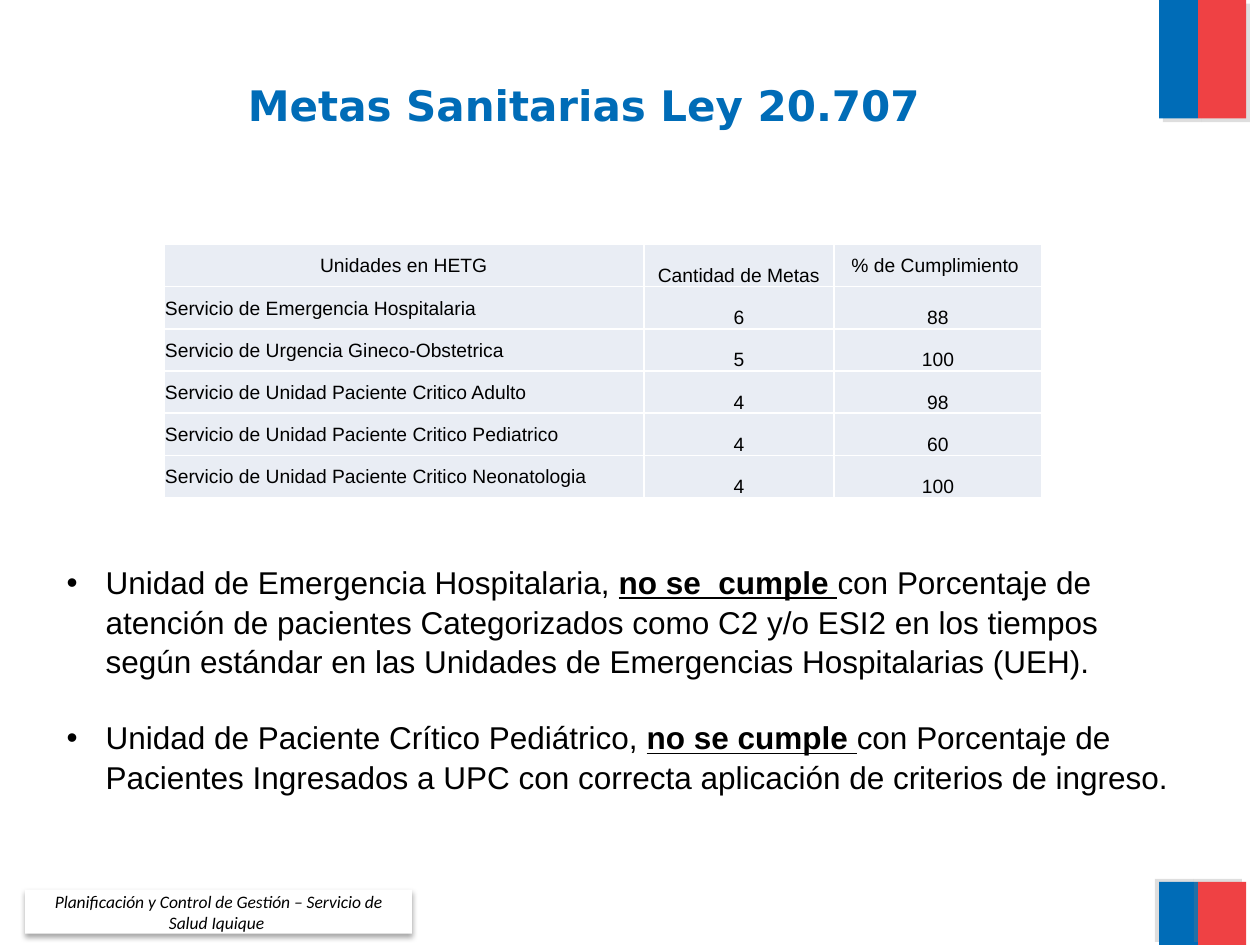
"""Build the slide on the health goals of Ley 20.707."""
import pptx
import pptx.util
import pptx.dml.color
import pptx.enum.shapes
import pptx.enum.text
import pptx.oxml
import pptx.oxml.ns

Pt = pptx.util.Pt
Align = pptx.enum.text.PP_ALIGN
Anchor = pptx.enum.text.MSO_ANCHOR

BLUE, RED, BLACK, WHITE, CELL = "006CB7", "EF4144", "000000", "FFFFFF", "E9EDF4"
TITLE = "Metas Sanitarias Ley 20.707"
FOOTER = "Planificación y Control de Gestión – Servicio de Salud Iquique "
ROWS = [
    ("Unidades en HETG", "Cantidad de Metas", "% de Cumplimiento "),
    ("Servicio de Emergencia Hospitalaria", "6", "88"),
    ("Servicio de Urgencia Gineco-Obstetrica", "5", "100"),
    ("Servicio de Unidad Paciente Critico Adulto", "4", "98"),
    ("Servicio de Unidad Paciente Critico Pediatrico", "4", "60"),
    ("Servicio de Unidad Paciente Critico Neonatologia", "4", "100"),
]
FINDINGS = [
    ("Unidad de Emergencia Hospitalaria, ", "no se  cumple ",
     "con Porcentaje de atención de pacientes Categorizados como C2 y/o ESI2 en los "
     "tiempos según estándar en las Unidades de Emergencias Hospitalarias (UEH)."),
    ("Unidad de Paciente Crítico Pediátrico, ", "no se cumple ",
     "con Porcentaje de Pacientes Ingresados a UPC con correcta aplicación de "
     "criterios de ingreso."),
]
COLUMN_WIDTHS = [274.3, 108.7, 118.8]
ROW_HEIGHT = 24.1
FLAG_STRIPES = [(662.4, 22.3, BLUE), (684.7, 27.4, RED)]
FLAG_BANDS = [(0, 67.7, 45), (504, 36, 215)]
INDENT = 22.3


def color(value):
    return pptx.dml.color.RGBColor.from_string(value)


def element(xml):
    return pptx.oxml.parse_xml(xml.replace(">", f" {pptx.oxml.ns.nsdecls('a')}>", 1))


def add_span(para, text, size, font, shade=BLACK, bold=False, italic=False, underline=False):
    span = para.add_run()
    span.text = text
    span.font.size, span.font.name = Pt(size), font
    span.font.bold, span.font.italic, span.font.underline = bold, italic, underline
    span.font.color.rgb = color(shade)


def add_text_box(slide, left, top, width, height):
    box = slide.shapes.add_textbox(Pt(left), Pt(top), Pt(width), Pt(height))
    box.text_frame.word_wrap = True
    return box


def add_rectangle(slide, left, top, width, height, fill, shade, opacity, blur, distance, angle):
    box = slide.shapes.add_shape(pptx.enum.shapes.MSO_SHAPE.RECTANGLE,
                                 Pt(left), Pt(top), Pt(width), Pt(height))
    box.fill.solid()
    box.fill.fore_color.rgb = color(fill)
    box.line.fill.background()
    box.shadow.inherit = False
    effects = box._element.spPr.find(pptx.oxml.ns.qn("a:effectLst"))
    effects.append(element(
        f'<a:outerShdw blurRad="{Pt(blur)}" dist="{Pt(distance)}" dir="{angle * 60000}" '
        f'algn="ctr" rotWithShape="0"><a:srgbClr val="{shade}">'
        f'<a:alpha val="{opacity * 1000}"/></a:srgbClr></a:outerShdw>'))
    return box


def add_flags(slide):
    for top, height, angle in FLAG_BANDS:
        for left, width, fill in FLAG_STRIPES:
            add_rectangle(slide, left, top, width, height, fill, "808080", 25, 0, 3, angle)


def add_title(slide):
    frame = add_text_box(slide, 12.2, 12.2, 643, 90).text_frame
    frame.vertical_anchor = Anchor.MIDDLE
    frame.margin_top = Pt(8.4)
    para = frame.paragraphs[0]
    para.alignment = Align.CENTER
    add_span(para, TITLE, 24, "DejaVu Sans", BLUE, bold=True)


def add_footer(slide):
    box = add_rectangle(slide, 14.4, 508.3, 221, 25.2, WHITE, BLACK, 35, 3.1, 1.8, 90)
    box.text_frame.word_wrap = True
    box.text_frame.vertical_anchor = Anchor.MIDDLE
    para = box.text_frame.paragraphs[0]
    para.alignment = Align.CENTER
    add_span(para, FOOTER, 10, "Calibri", italic=True)


def fill_cell(cell, text, is_label, is_middle):
    cell.margin_left = cell.margin_right = cell.margin_top = Pt(0.7)
    cell.margin_bottom = 0
    cell.vertical_anchor = Anchor.MIDDLE if is_middle else Anchor.BOTTOM
    cell.fill.solid()
    cell.fill.fore_color.rgb = color(CELL)
    para = cell.text_frame.paragraphs[0]
    para.alignment = Align.LEFT if is_label else Align.CENTER
    add_span(para, text, 11, "Arial")
    properties = cell._tc.get_or_add_tcPr()
    for position, side in enumerate("LRTB"):
        properties.insert(position, element(
            f'<a:ln{side} w="{Pt(1)}"><a:solidFill><a:srgbClr val="{WHITE}"/>'
            f'</a:solidFill></a:ln{side}>'))


def add_goals_table(slide):
    table = slide.shapes.add_table(
        len(ROWS), len(COLUMN_WIDTHS), Pt(93.6), Pt(139.7),
        Pt(sum(COLUMN_WIDTHS)), Pt(ROW_HEIGHT * len(ROWS))).table
    table.first_row = table.horz_banding = False
    for column, width in zip(table.columns, COLUMN_WIDTHS):
        column.width = Pt(width)
    for r, row in enumerate(ROWS):
        table.rows[r].height = Pt(ROW_HEIGHT)
        for c, text in enumerate(row):
            is_middle = c == 0 or (r == 0 and c == 2)
            fill_cell(table.cell(r, c), text, r > 0 and c == 0, is_middle)


def add_findings(slide):
    frame = add_text_box(slide, 31, 317.5, 657.4, 203.8).text_frame
    for number, parts in enumerate(FINDINGS):
        para = frame.add_paragraph() if number else frame.paragraphs[0]
        para.line_spacing = 1.04
        para.space_before = Pt(21.3 if number else 0)
        properties = para._p.get_or_add_pPr()
        properties.set("marL", str(Pt(INDENT)))
        properties.set("indent", str(Pt(-INDENT)))
        properties.append(element('<a:buFont typeface="Arial"/>'.replace("/>", "></a:buFont>")))
        properties.append(element('<a:buChar char="•"></a:buChar>'))
        for position, text in enumerate(parts):
            stressed = position == 1
            add_span(para, text, 18, "Arial", bold=stressed, underline=stressed)


def main():
    deck = pptx.Presentation()
    deck.slide_width, deck.slide_height = Pt(720), Pt(540)
    slide = deck.slides.add_slide(deck.slide_layouts[6])
    add_flags(slide)
    add_title(slide)
    add_footer(slide)
    add_goals_table(slide)
    add_findings(slide)
    deck.save("out.pptx")


if __name__ == "__main__":
    main()
